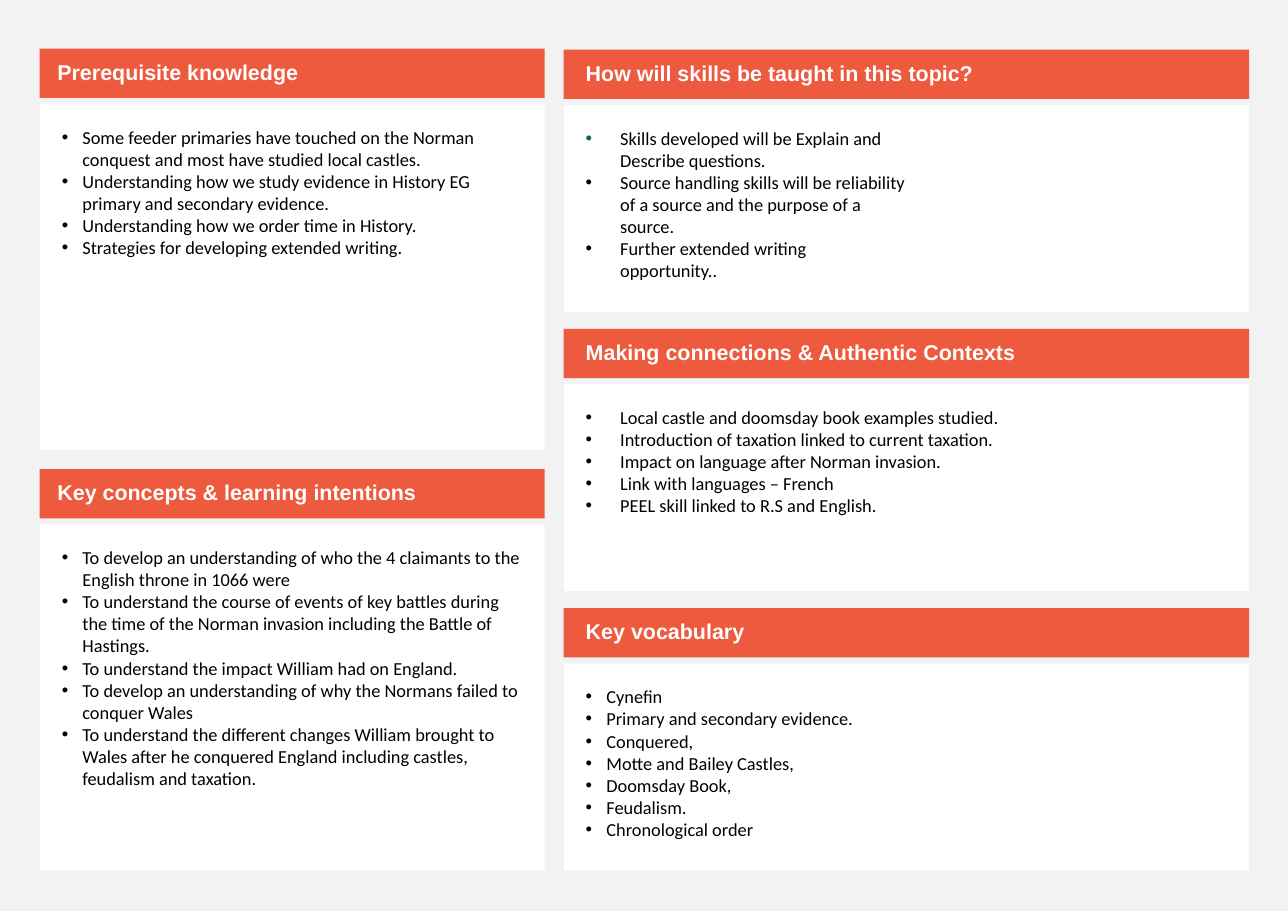
from dataclasses import dataclass

from lxml import etree
from pptx import Presentation
from pptx import util as u
from pptx.dml.color import RGBColor
from pptx.enum import shapes, text
from pptx.oxml.ns import qn
from pptx.shapes.autoshape import Shape
from pptx.slide import Slide

BACKGROUND, ORANGE, WHITE, BLACK, GREEN = "F2F2F2", "ED5A3E", "FFFFFF", "000000", "00685E"
HEADER_HEIGHT, BODY_OFFSET, BODY_INSET = 32.2, 36.2, 14.4
NARROW_INDENT, WIDE_INDENT = 13.5, 22.5


@dataclass(frozen=True)
class Panel:
    title: str
    bullets: tuple[str, ...]
    indent: float = NARROW_INDENT
    columns: int = 1
    first_bullet_color: str = BLACK


@dataclass(frozen=True)
class Column:
    left: float
    top: float
    width: float
    pitch: float
    body_height: float
    title_inset: float
    panels: tuple[Panel, ...]


LEFT_COLUMN = Column(26, 31.8, 330, 274.8, 226.2, 11.5, (
    Panel("Prerequisite knowledge", (
        "Some feeder primaries have touched on the Norman conquest and most have "
        "studied local castles.",
        "Understanding how we study evidence in History EG primary and secondary evidence.",
        "Understanding how we order time in History.",
        "Strategies for developing extended writing.",
    )),
    Panel("Key concepts & learning intentions", (
        "To develop an understanding of who the 4 claimants to the English throne in 1066 were",
        "To understand the course of events of key battles during the time of the Norman "
        "invasion including the Battle of Hastings.",
        "To understand the impact William had on England.",
        "To develop an understanding of why the Normans failed to conquer Wales",
        "To understand the different changes William brought to Wales after he conquered "
        "England including castles, feudalism and taxation.",
    )),
))
RIGHT_COLUMN = Column(368.4, 32.5, 448, 182.5, 135.2, 14.4, (
    Panel("How will skills be taught in this topic?", (
        "Skills developed will be Explain and Describe questions.",
        "Source handling skills will be reliability of a source and the purpose of a source.",
        "Further extended writing opportunity..",
    ), WIDE_INDENT, columns=2, first_bullet_color=GREEN),
    Panel("Making connections & Authentic Contexts", (
        "Local castle and doomsday book examples studied.",
        "Introduction of taxation linked to current taxation.",
        "Impact on language after Norman invasion.",
        "Link with languages – French",
        "PEEL skill linked to R.S and English.",
    ), WIDE_INDENT),
    Panel("Key vocabulary", (
        "Cynefin",
        "Primary and secondary evidence.",
        "Conquered,",
        "Motte and Bailey Castles,",
        "Doomsday Book,",
        "Feudalism.",
        "Chronological order",
    )),
))


def color(value: str) -> RGBColor:
    return RGBColor.from_string(value)


def add_box(slide: Slide, left: float, top: float, width: float, height: float,
            fill: str) -> Shape:
    shape = slide.shapes.add_shape(shapes.MSO_SHAPE.RECTANGLE, u.Pt(left), u.Pt(top),
                                   u.Pt(width), u.Pt(height))
    shape.shadow.inherit = False
    shape.fill.solid()
    shape.fill.fore_color.rgb = color(fill)
    shape.line.fill.background()
    shape.text_frame.word_wrap = True
    return shape


def style_paragraph(paragraph, font: str, size: float, font_color: str, bold: bool) -> None:
    paragraph.alignment = text.PP_ALIGN.LEFT
    paragraph.font.name = font
    paragraph.font.size = u.Pt(size)
    paragraph.font.color.rgb = color(font_color)
    paragraph.font.bold = bold


def set_bullet(paragraph, indent: float, bullet_color: str) -> None:
    """Give the paragraph a hanging indent and a coloured dot."""
    properties = paragraph._p.get_or_add_pPr()
    properties.set("marL", str(u.Pt(indent)))
    properties.set("indent", str(-u.Pt(indent)))
    dot = etree.Element(qn("a:buChar"), char="•")
    dot_font = etree.Element(qn("a:buFont"), typeface="Arial")
    dot_color = etree.Element(qn("a:buClr"))
    etree.SubElement(dot_color, qn("a:srgbClr"), val=bullet_color)
    for element in (dot, dot_font, dot_color):
        properties.insert(0, element)


def add_header(slide: Slide, column: Column, top: float, title: str) -> None:
    shape = add_box(slide, column.left, top, column.width, HEADER_HEIGHT, ORANGE)
    frame = shape.text_frame
    frame.margin_left = u.Pt(column.title_inset)
    frame.vertical_anchor = text.MSO_ANCHOR.MIDDLE
    paragraph = frame.paragraphs[0]
    paragraph.text = title
    paragraph.line_spacing = 0.9
    paragraph.space_before = u.Pt(11)
    style_paragraph(paragraph, "Arial", 14, WHITE, True)


def add_body(slide: Slide, column: Column, top: float, panel: Panel) -> None:
    shape = add_box(slide, column.left, top, column.width, column.body_height, WHITE)
    frame = shape.text_frame
    frame.margin_left = frame.margin_right = u.Pt(BODY_INSET)
    frame.margin_top = frame.margin_bottom = u.Pt(BODY_INSET)
    frame.vertical_anchor = text.MSO_ANCHOR.TOP
    if panel.columns > 1:
        frame._txBody.bodyPr.set("numCol", str(panel.columns))
    for index, bullet in enumerate(panel.bullets):
        paragraph = frame.add_paragraph() if index else frame.paragraphs[0]
        paragraph.text = bullet
        style_paragraph(paragraph, "Calibri", 12, BLACK, False)
        set_bullet(paragraph, panel.indent, BLACK if index else panel.first_bullet_color)


def main() -> None:
    presentation = Presentation()
    presentation.slide_width = u.Pt(841.7)
    presentation.slide_height = u.Pt(595.4)
    slide = presentation.slides.add_slide(presentation.slide_layouts[6])
    slide.background.fill.solid()
    slide.background.fill.fore_color.rgb = color(BACKGROUND)
    for column in (LEFT_COLUMN, RIGHT_COLUMN):
        for index, panel in enumerate(column.panels):
            top = column.top + index * column.pitch
            add_header(slide, column, top, panel.title)
            add_body(slide, column, top + BODY_OFFSET, panel)
    presentation.save("out.pptx")


if __name__ == "__main__":
    main()
